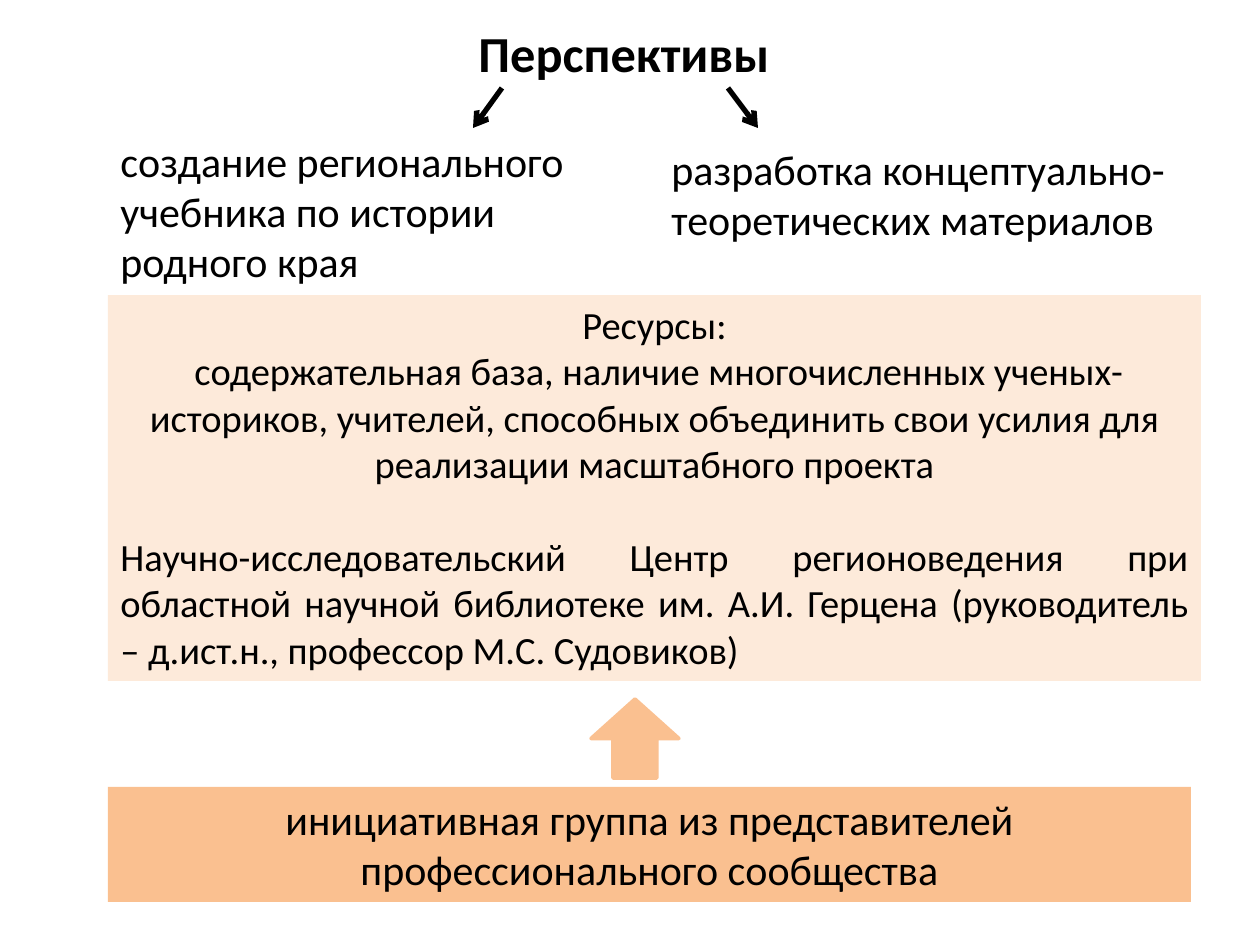
from lxml import etree
from pptx import Presentation, util as u
from pptx.dml.color import RGBColor
from pptx.enum import shapes, text
from pptx.oxml.ns import qn

COLORS = {"text": "000000", "resources": "FDEADA", "group": "FAC090"}
SCALE = 914400 / 126  # EMU in one px
LEFT = 108  # shared left edge of the text blocks


def px(*lengths):
    return [u.Emu(round(length * SCALE)) for length in lengths]


def add_text(box, paragraphs, size=24, bold=False, grow=True,
             align=text.PP_ALIGN.LEFT):
    frame = box.text_frame
    frame.word_wrap = True
    frame.vertical_anchor = text.MSO_ANCHOR.TOP
    if grow:
        frame.auto_size = text.MSO_AUTO_SIZE.SHAPE_TO_FIT_TEXT
    for index, words in enumerate(paragraphs):
        paragraph = frame.add_paragraph() if index else frame.paragraphs[0]
        paragraph.alignment = align
        run = paragraph.add_run()
        run.text = words
        run.font.name = "Calibri"
        run.font.size = u.Pt(size)
        run.font.bold = bold
        run.font.color.rgb = RGBColor.from_string(COLORS["text"])
    return frame


presentation = Presentation()
presentation.slide_width, presentation.slide_height = px(1260, 945)
slide = presentation.slides.add_slide(presentation.slide_layouts[6])

# Title
title = slide.shapes.add_textbox(*px(57, 22, 1134, 108))
frame = add_text(title, ["Перспективы"], size=28.8, bold=True, grow=False,
                 align=text.PP_ALIGN.CENTER)
frame.margin_top = 0

# Filled blocks and the arrow between them
blocks = {}
for name, kind, color, box in [
    ("resources", "RECTANGLE", "resources", (LEFT, 295, 1093, 386)),
    ("group", "RECTANGLE", "group", (LEFT, 787, 1083, 115)),
    ("arrow", "UP_ARROW", "group", (591, 699, 88, 79)),
]:
    shape = slide.shapes.add_shape(shapes.MSO_SHAPE[kind], *px(*box))
    shape.shadow.inherit = False
    shape.fill.solid()
    shape.fill.fore_color.rgb = RGBColor.from_string(COLORS[color])
    shape.line.fill.background()
    blocks[name] = shape

outline = blocks["arrow"].line
outline.color.rgb = RGBColor.from_string(COLORS["group"])
outline.width = u.Pt(2)

# Resources: the last paragraph is justified and set one line apart
frame = add_text(blocks["resources"], [
    "Ресурсы:",
    " содержательная база, наличие многочисленных ученых-историков, учителей, "
    "способных объединить свои усилия для реализации масштабного проекта",
    "Научно-исследовательский Центр регионоведения при областной научной "
    "библиотеке им. А.И. Герцена (руководитель – д.ист.н., профессор "
    "М.С. Судовиков)",
], size=22, align=text.PP_ALIGN.CENTER)
centre = frame.paragraphs[-1]
centre.alignment = text.PP_ALIGN.JUSTIFY
centre.space_before = u.Pt(27)

# Initiative group
add_text(blocks["group"],
         ["инициативная группа из представителей профессионального сообщества"],
         align=text.PP_ALIGN.CENTER)

# Two prospects
for words, box in [
    ("создание регионального учебника по истории родного края",
     (LEFT, 129, 483, 165)),
    ("разработка концептуально-теоретических материалов",
     (659, 137, 571, 115)),
]:
    add_text(slide.shapes.add_textbox(*px(*box)), [words])

# Arrows from the title to the prospects
for start, end in [(502, 473), (728, 758)]:
    connector = slide.shapes.add_connector(
        shapes.MSO_CONNECTOR.STRAIGHT, *px(start, 88, end, 128))
    connector.line.color.rgb = RGBColor.from_string(COLORS["text"])
    connector.line.width = u.Pt(3)
    etree.SubElement(connector.line._get_or_add_ln(), qn("a:tailEnd"), type="arrow")
    etree.SubElement(connector._element.spPr, qn("a:effectLst"))

presentation.save("out.pptx")
